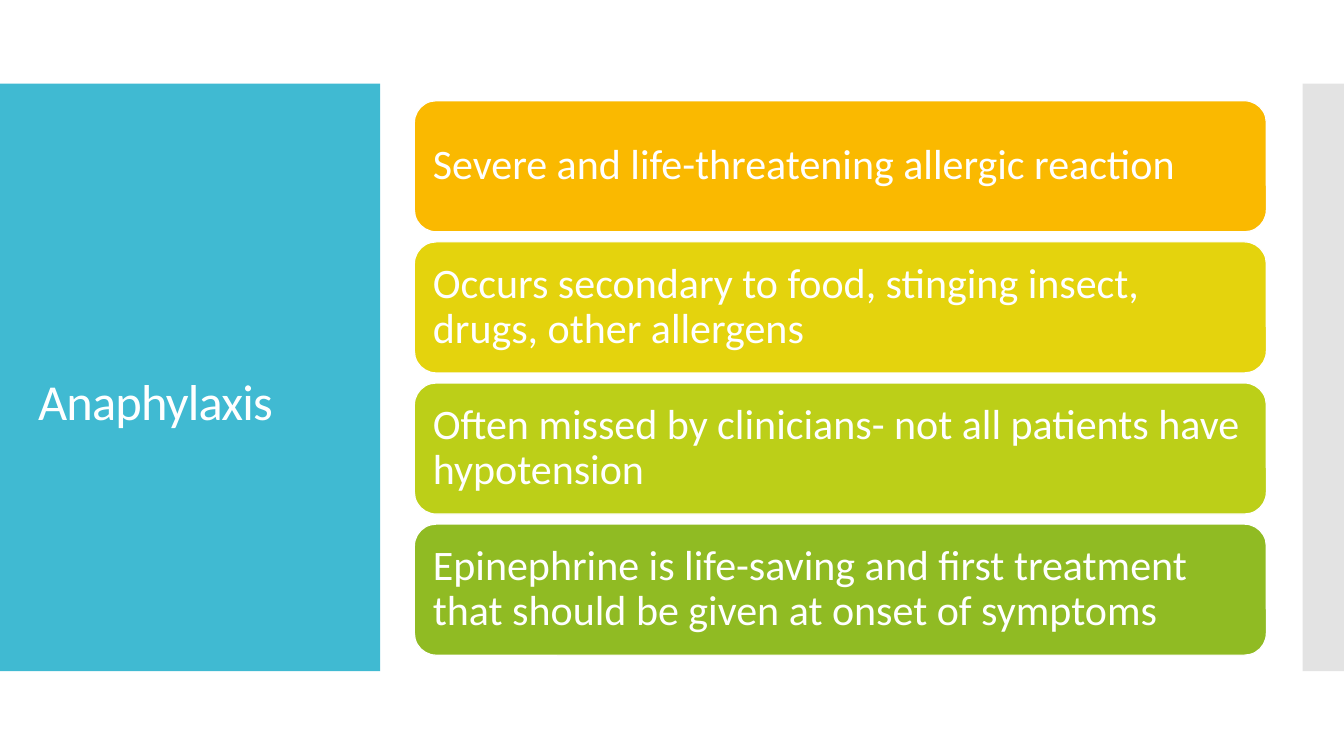
"""Build the Anaphylaxis slide: a title panel beside four coloured statements."""
from pptx import Presentation
from pptx.dml.color import RGBColor
from pptx.enum.shapes import MSO_SHAPE as Shape
from pptx.enum.text import MSO_ANCHOR as Anchor, PP_ALIGN as Align
from pptx.oxml.ns import qn
from pptx.util import Inches, Pt
from lxml import etree

COLORS = {"white": "FFFFFF", "panel": "40BAD2", "edge": "C8C8C8", "amber": "FAB900",
          "yellow": "E4D30D", "lime": "BCCF18", "green": "90BB23"}
STATEMENTS = [
    ("amber", "Severe and life-threatening allergic reaction"),
    ("yellow", "Occurs secondary to food, stinging insect, drugs, other allergens"),
    ("lime", "Often missed by clinicians- not all patients have hypotension"),
    ("green", "Epinephrine is life-saving and first treatment that should be given at onset of symptoms"),
]


def add_block(page, kind, left, top, width, height, color):
    block = page.shapes.add_shape(kind, Inches(left), Inches(top), Inches(width), Inches(height))
    block.shadow.inherit = False
    block.fill.solid()
    block.fill.fore_color.rgb = RGBColor.from_string(COLORS[color])
    block.line.fill.background()
    return block


def write_text(box, text, size):
    frame = box.text_frame
    frame.word_wrap = True
    frame.vertical_anchor = Anchor.MIDDLE
    para = frame.paragraphs[0]
    para.text = text
    para.alignment = Align.LEFT
    para.line_spacing = 0.9
    para.font.name = "Calibri"
    para.font.size = Pt(size)
    para.font.color.rgb = RGBColor.from_string(COLORS["white"])
    return frame


deck = Presentation()
deck.slide_width, deck.slide_height = Inches(13.33), Inches(7.5)
page = deck.slides.add_slide(deck.slide_layouts[6])

add_block(page, Shape.RECTANGLE, 0, 0.83, 3.77, 5.83, "panel")
edge = add_block(page, Shape.RECTANGLE, 12.92, 0.83, 0.41, 5.83, "edge")
edge_color = edge.fill._xPr.find(qn("a:solidFill"))[0]
etree.SubElement(edge_color, qn("a:alpha")).set("val", "50000")

title = page.shapes.add_textbox(Inches(0.28), Inches(1.5), Inches(3.22), Inches(5.03))
title_frame = write_text(title, "Anaphylaxis", 36)
title_frame.paragraphs[0].runs[0].font._element.set("spc", "-60")

for row, (color, statement) in enumerate(STATEMENTS):
    card = add_block(page, Shape.ROUNDED_RECTANGLE, 4.11, 1 + 1.4 * row, 8.45, 1.3, color)
    card.line.color.rgb = RGBColor.from_string(COLORS["white"])
    card.line.width = Pt(0.85)
    frame = write_text(card, statement, 30)
    frame.margin_left = frame.margin_right = Inches(0.12)
    frame.margin_top = frame.margin_bottom = Inches(0.12)

deck.save("out.pptx")
